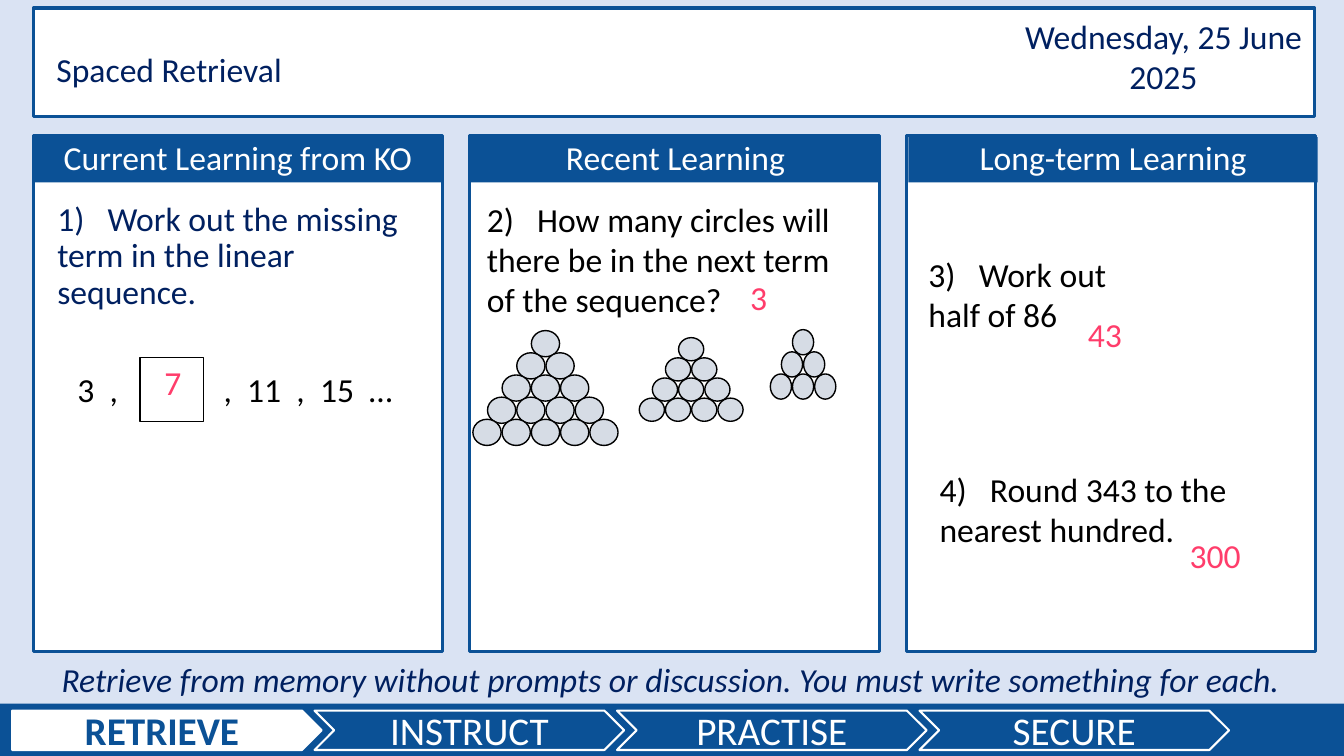
"""Build the spaced retrieval starter slide."""
from dataclasses import dataclass
from typing import Any

from lxml import etree
from pptx import Presentation
from pptx.dml.color import RGBColor
from pptx.enum.shapes import MSO_SHAPE
from pptx.enum.text import MSO_ANCHOR, MSO_AUTO_SIZE, PP_ALIGN
from pptx.oxml.ns import qn
from pptx.util import Inches, Pt

RECT, OVAL = MSO_SHAPE.RECTANGLE, MSO_SHAPE.OVAL
ARROW, CHEVRON = MSO_SHAPE.PENTAGON, MSO_SHAPE.CHEVRON
TOP, MIDDLE = MSO_ANCHOR.TOP, MSO_ANCHOR.MIDDLE
LEFT, CENTER = PP_ALIGN.LEFT, PP_ALIGN.CENTER
FIXED = MSO_AUTO_SIZE.NONE


@dataclass(frozen=True)
class Theme:
    font: str = "Calibri"
    back: str = "DAE3F3"
    blue: str = "0B5196"
    navy: str = "002060"
    white: str = "FFFFFF"
    black: str = "000000"
    pink: str = "FF3D6B"
    grey: str = "D6DCE5"
    body: int = 24
    step: int = 28


@dataclass(frozen=True)
class Box:
    left: float
    top: float
    width: float
    height: float

    def place(self) -> tuple[int, int, int, int]:
        return (Inches(self.left), Inches(self.top),
                Inches(self.width), Inches(self.height))


@dataclass(frozen=True)
class Label:
    text: str
    box: Box
    color: str
    align: Any = LEFT
    tab: float = 0
    space: float = 1.0
    italic: bool = False


@dataclass(frozen=True)
class Pile:
    left: float
    top: float
    rows: int
    width: float
    height: float
    across: float
    down: float


THEME = Theme()
STEPS = ("RETRIEVE", "INSTRUCT", "PRACTISE", "SECURE")
HEADS = ("Current Learning from KO", "Recent Learning", "Long-term Learning")
PILES = (
    Pile(5.27, 3.28, 5, 0.28, 0.26, 0.29, 0.22),
    Pile(6.73, 3.35, 4, 0.25, 0.23, 0.26, 0.2),
    Pile(7.86, 3.27, 3, 0.21, 0.25, 0.22, 0.22),
)
NOTES = (
    Label("Retrieve from memory without prompts or discussion. "
          "You must write something for each.",
          Box(0.12, 6.49, 13.06, 0.5), THEME.navy, CENTER, italic=True),
    Label("Wednesday, 25 June 2025", Box(10.02, 0.11, 3.04, 0.5), THEME.navy, CENTER),
    Label("1)\tWork out the missing term in the linear sequence.",
          Box(0.47, 1.96, 3.8, 4.4), THEME.navy, tab=0.5, space=0.9),
    Label("3  ,\t,  11  ,  15  …", Box(0.67, 3.61, 3.6, 0.5), THEME.black, tab=1.45),
    Label("2)\tHow many circles will there be in the next term of the sequence?",
          Box(4.73, 1.92, 3.86, 1.31), THEME.black, tab=0.5),
    Label("3)\tWork out half of 86", Box(9.11, 2.47, 2.4, 0.91), THEME.black, tab=0.5),
    Label("4)\tRound 343 to the nearest hundred.",
          Box(9.22, 4.6, 3.59, 0.91), THEME.black, tab=0.5),
)
KEYS = (
    Label("3", Box(7.34, 2.7, 0.82, 0.5), THEME.pink),
    Label("300", Box(11.7, 5.26, 0.92, 0.5), THEME.pink),
    Label("43", Box(10.69, 3.07, 0.82, 0.5), THEME.pink),
    Label("7", Box(1.32, 3.54, 0.79, 0.5), THEME.pink, CENTER),
)


def write(shape: Any, text: str, *, color: str, size: int = THEME.body,
          align: Any = LEFT, anchor: Any = TOP, space: Any = 1.0,
          tab: float = 0, bold: bool = False, italic: bool = False) -> None:
    """Put formatted text in a shape."""
    frame = shape.text_frame
    frame.word_wrap = True
    frame.auto_size = FIXED
    frame.vertical_anchor = anchor
    para = frame.paragraphs[0]
    para.alignment = align
    if tab:
        stops = etree.SubElement(para._p.get_or_add_pPr(), qn("a:tabLst"))
        etree.SubElement(stops, qn("a:tab"), pos=str(Inches(tab)), algn="l")
    para.line_spacing = space
    para.space_before = Pt(0)
    run = para.add_run()
    run.text = text
    font = run.font
    font.name, font.size = THEME.font, Pt(size)
    font.bold, font.italic = bold, italic
    font.color.rgb = RGBColor.from_string(color)


def draw(shapes: Any, kind: Any, box: Box, fill: str,
         line: str = "", width: float = 1) -> Any:
    """Add a filled preset shape with an optional outline."""
    shape = shapes.add_shape(kind, *box.place())
    shape.shadow.inherit = False
    shape.fill.solid()
    shape.fill.fore_color.rgb = RGBColor.from_string(fill)
    if line:
        shape.line.color.rgb = RGBColor.from_string(line)
        shape.line.width = Pt(width)
    else:
        shape.line.fill.background()
    return shape


def label(shapes: Any, item: Label) -> None:
    """Add a text box for a label."""
    write(shapes.add_textbox(*item.box.place()), item.text, color=item.color,
          align=item.align, tab=item.tab, space=item.space, italic=item.italic)


def stack(shapes: Any, pile: Pile) -> None:
    """Draw a grouped triangle of circles."""
    group = shapes.add_group_shape()
    for row in range(pile.rows):
        for col in range(row + 1):
            left = pile.left + (col - row / 2) * pile.across
            box = Box(left, pile.top + row * pile.down, pile.width, pile.height)
            draw(group.shapes, OVAL, box, THEME.grey, THEME.black)


def steps(shapes: Any) -> None:
    """Draw the lesson steps along the foot."""
    draw(shapes, RECT, Box(0, 6.98, 13.33, 0.52), THEME.blue)
    for i, name in enumerate(STEPS):
        now = i == 0
        fill, ink = (THEME.white, THEME.blue) if now else (THEME.blue, THEME.white)
        step = draw(shapes, ARROW if now else CHEVRON,
                    Box(0.12 + 3 * i, 7.05, 3.07, 0.39), fill, THEME.white, 1.5)
        write(step, name, color=ink, size=THEME.step, align=CENTER,
              anchor=MIDDLE, bold=now)


def main() -> None:
    """Build and save the slide."""
    deck = Presentation()
    deck.slide_width, deck.slide_height = Inches(13.33), Inches(7.5)
    slide = deck.slides.add_slide(deck.slide_layouts[5])
    slide.background.fill.solid()
    slide.background.fill.fore_color.rgb = RGBColor.from_string(THEME.back)
    shapes = slide.shapes
    steps(shapes)
    for i, name in enumerate(HEADS):
        draw(shapes, RECT, Box(0.33 + 4.33 * i, 1.34, 4.06, 5.12),
             THEME.white, THEME.blue, 2.25)
        head = draw(shapes, RECT, Box(0.33 + 4.34 * i, 1.36, 4.06, 0.45), THEME.blue)
        write(head, name, color=THEME.white, align=CENTER, space=Pt(25))
    draw(shapes, RECT, Box(0.33, 0.08, 12.71, 1.08), THEME.white, THEME.blue, 2.25)
    title = shapes.title
    title.left, title.top, title.width, title.height = Box(0.46, 0.48, 8.83, 0.53).place()
    write(title, "Spaced Retrieval", color=THEME.navy, space=0.9)
    title.element.getparent().append(title.element)
    for note in NOTES:
        label(shapes, note)
    draw(shapes, RECT, Box(1.39, 3.55, 0.63, 0.63), THEME.white, THEME.black)
    for pile in PILES:
        stack(shapes, pile)
    for key in KEYS:
        label(shapes, key)
    deck.save("out.pptx")


if __name__ == "__main__":
    main()
